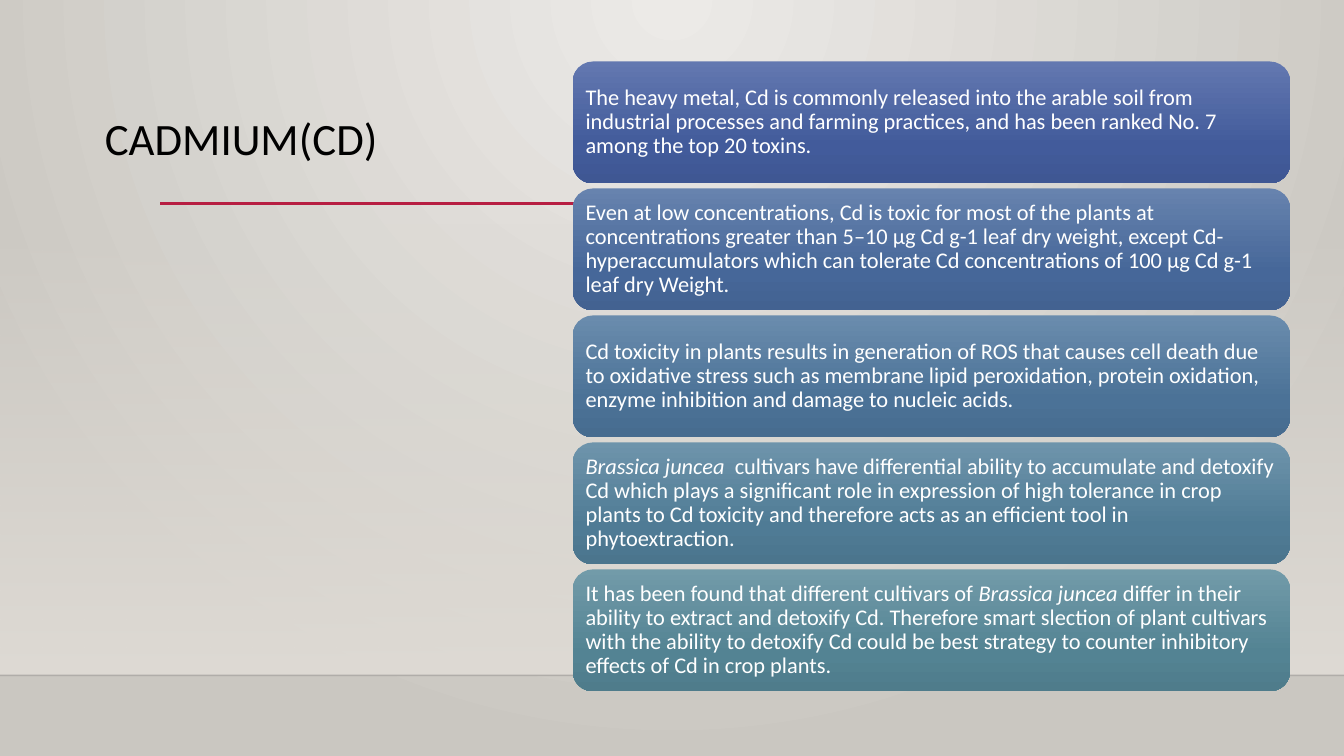
from lxml.etree import SubElement
from pptx import Presentation
from pptx.dml.color import RGBColor
from pptx.enum.shapes import MSO_CONNECTOR, MSO_SHAPE
from pptx.enum.text import MSO_ANCHOR, MSO_AUTO_SIZE, PP_ALIGN
from pptx.oxml.ns import qn
from pptx.util import Pt

# Content: each fact is a list of (text, italic) runs
TITLE = "CADMIUM(CD)"
FACTS = [
    [("The heavy metal, Cd is commonly released into the arable soil from industrial processes "
      "and farming practices, and has been ranked No. 7 among the top 20 toxins.", False)],
    [("Even at low concentrations, Cd is toxic for most of the plants at concentrations greater "
      "than 5–10 μg Cd g-1 leaf dry weight, except Cd-hyperaccumulators which can tolerate Cd "
      "concentrations of 100 μg Cd g-1 leaf dry Weight.", False)],
    [("Cd toxicity in plants results in generation of ROS that causes cell death due to oxidative "
      "stress such as membrane lipid peroxidation, protein oxidation, enzyme inhibition and "
      "damage to nucleic acids.", False)],
    [("Brassica juncea  ", True),
     ("cultivars have differential ability to accumulate and detoxify Cd which plays a "
      "significant role in expression of high tolerance in crop plants to Cd toxicity and "
      "therefore acts as an efficient tool in phytoextraction.", False)],
    [("It has been found that different cultivars of ", False),
     ("Brassica juncea ", True),
     ("differ in their ability to extract and detoxify Cd. Therefore smart slection of plant "
      "cultivars with the ability to detoxify Cd could be best strategy to counter inhibitory "
      "effects of Cd in crop plants.", False)],
]

THEME = {
    "font": "Calibri",
    "title_size": 32,
    "fact_size": 16,
    "title": "000000",
    "fact": "FFFFFF",
    "accent": "B71E42",
    "horizon": "000001",
    "wall": "DFDBD5",
    "background": ("ECEAE7", "CAC7C1"),
    "facts": [
        ("6378B0", "425B9B", "3F5793"),
        ("6783AE", "466799", "436291"),
        ("6A8CAD", "4B7297", "476C8F"),
        ("6E94AB", "4F7B95", "4B758D"),
        ("729BA9", "538393", "4F7C8B"),
    ],
}

# Layout in points
WIDTH, HEIGHT = 960, 540
HORIZON_Y = 482.4
WALL_TOP = 159.1
TITLE_BOX = {"left": 67.7, "top": 79.9, "width": 269.3, "height": 377.3}
FACT_LEFT, FACT_TOP, FACT_WIDTH, FACT_HEIGHT = 409, 43.9, 512.6, 87.1
FACT_PITCH = 90.7
FACT_MARGIN = 5


def set_all(target, values):
    for name, value in values.items():
        setattr(target, name, value)


def add_alpha(color_element, percent):
    SubElement(color_element, qn("a:alpha"), val=str(percent * 1000))


def paint_gradient(fill, owner, stops, radial=False):
    """Give owner a gradient of (position, colour, opacity) stops."""
    fill.solid()
    solid = owner.find(qn("a:solidFill"))
    gradient = solid.makeelement(qn("a:gradFill"), {"rotWithShape": "1"})
    stop_list = SubElement(gradient, qn("a:gsLst"))
    for position, color, opacity in stops:
        stop = SubElement(stop_list, qn("a:gs"), pos=str(position * 1000))
        color_element = SubElement(stop, qn("a:srgbClr"), val=color)
        if opacity < 100:
            add_alpha(color_element, opacity)
    if radial:
        circle = SubElement(gradient, qn("a:path"), {"path": "circle"})
        SubElement(circle, qn("a:fillToRect"), l="43000", t="0", r="43000", b="100000")
    else:
        SubElement(gradient, qn("a:lin"), ang="5400000", scaled="0")
    owner.replace(solid, gradient)


def add_block(slide, preset, left, top, width, height, stops):
    shape = slide.shapes.add_shape(preset, Pt(left), Pt(top), Pt(width), Pt(height))
    shape.shadow.inherit = False
    shape.line.fill.background()
    paint_gradient(shape.fill, shape.element.spPr, stops)
    return shape


def add_rule(slide, left, right, y, color, weight):
    rule = slide.shapes.add_connector(MSO_CONNECTOR.STRAIGHT, Pt(left), Pt(y), Pt(right), Pt(y))
    rule.line.color.rgb = RGBColor.from_string(color)
    rule.line.width = Pt(weight)
    SubElement(rule.element.spPr, qn("a:effectLst"))
    return rule


def write(frame, runs, size, color, frame_format):
    set_all(frame, {"word_wrap": True, "auto_size": MSO_AUTO_SIZE.NONE, **frame_format})
    paragraph = frame.paragraphs[0]
    set_all(paragraph, {"alignment": PP_ALIGN.LEFT, "line_spacing": 0.9})
    for text, italic in runs:
        run = paragraph.add_run()
        run.text = text
        set_all(run.font, {"name": THEME["font"], "size": Pt(size), "italic": italic})
        run.font.color.rgb = RGBColor.from_string(color)


def main():
    presentation = Presentation()
    set_all(presentation, {"slide_width": Pt(WIDTH), "slide_height": Pt(HEIGHT)})
    slide = presentation.slides.add_slide(presentation.slide_layouts[5])

    # Background, wall and horizon
    center, edge = THEME["background"]
    background_fill = slide.background.fill
    background_fill.solid()
    paint_gradient(background_fill, slide.element.find(".//" + qn("p:bgPr")),
                   [(0, center, 100), (100, edge, 100)], radial=True)
    add_block(slide, MSO_SHAPE.RECTANGLE, 0, WALL_TOP, WIDTH, HORIZON_Y - WALL_TOP,
              [(0, THEME["wall"], 0), (100, THEME["wall"], 100)])
    horizon = add_rule(slide, 0, WIDTH, HORIZON_Y, THEME["horizon"], 1)
    add_alpha(horizon.element.find(".//" + qn("a:srgbClr")), 20)
    add_rule(slide, 114.5, 871.2, 145.4, THEME["accent"], 2.5)

    # Title, in front of the wall
    title = slide.shapes.title
    title.element.getparent().append(title.element)
    set_all(title, {name: Pt(value) for name, value in TITLE_BOX.items()})
    write(title.text_frame, [(TITLE, False)], THEME["title_size"], THEME["title"],
          {"vertical_anchor": MSO_ANCHOR.TOP})

    # Stack of facts
    margins = {f"margin_{side}": Pt(FACT_MARGIN) for side in ("left", "top", "right", "bottom")}
    for index, (runs, colors) in enumerate(zip(FACTS, THEME["facts"])):
        stops = [(position, color, 100) for position, color in zip((0, 69, 100), colors)]
        fact = add_block(slide, MSO_SHAPE.ROUNDED_RECTANGLE, FACT_LEFT,
                         FACT_TOP + index * FACT_PITCH, FACT_WIDTH, FACT_HEIGHT, stops)
        write(fact.text_frame, runs, THEME["fact_size"], THEME["fact"],
              {"vertical_anchor": MSO_ANCHOR.MIDDLE, **margins})

    presentation.save("out.pptx")


if __name__ == "__main__":
    main()
